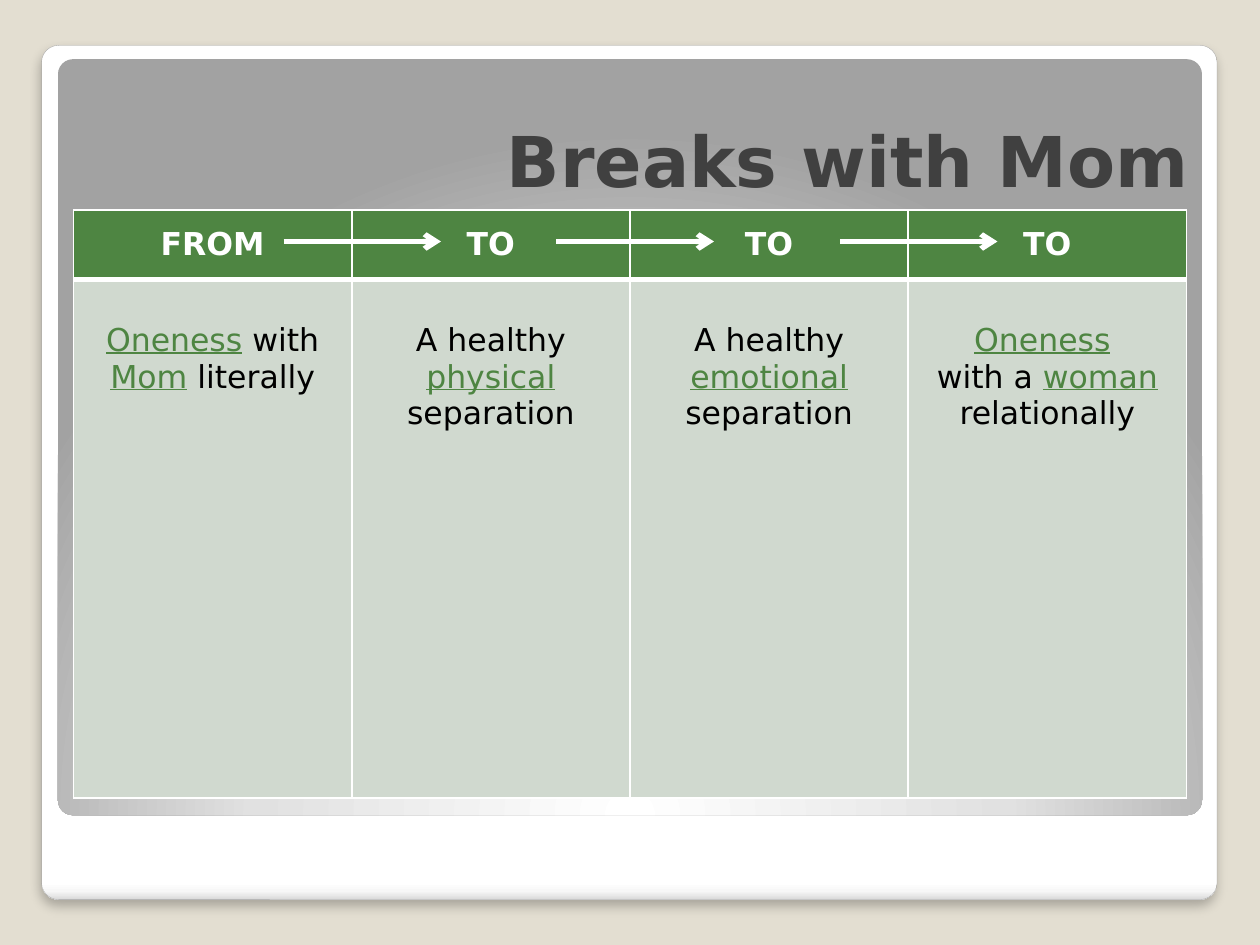
from lxml.etree import SubElement
from pptx import Presentation
from pptx.dml.color import RGBColor
from pptx.enum.shapes import MSO_CONNECTOR, MSO_SHAPE
from pptx.enum.text import MSO_ANCHOR, PP_ALIGN
from pptx.oxml.ns import qn
from pptx.util import Pt

COLORS = {
    "background": "E3DED1", "white": "FFFFFF", "outline": "A4A4A4",
    "title": "404040", "green": "4E8542", "pale": "D0D9CF", "black": "000000",
}
TITLE = {"size": Pt(40), "bold": True, "underline": False}
HEADER = {"size": Pt(18), "bold": True, "underline": False}
BODY = {"size": Pt(18), "bold": False, "underline": False}
KEYWORD = BODY | {"underline": True}


def add_span(para, text, formats, color):
    span = para.add_run()
    span.text = text
    span.font.name = "DejaVu Sans"
    span.font.color.rgb = RGBColor.from_string(COLORS[color])
    for name, value in formats.items():
        setattr(span.font, name, value)


def add_element(parent, tag, **attributes):
    return SubElement(parent, qn(tag), {key: str(value) for key, value in attributes.items()})


deck = Presentation()
deck.slide_width, deck.slide_height = Pt(720), Pt(540)
page = deck.slides.add_slide(deck.slide_layouts[6])
page.background.fill.solid()
page.background.fill.fore_color.rgb = RGBColor.from_string(COLORS["background"])

# Rounded panels: white card, then the grey glow with its centre below the panel
panels = [
    ((23.76, 25.92, 671.76, 488.16),
     [(0, "FFFFFF"), (98, "FFFFFF"), (99, "F7F7F7"), (100, "DADADA")], "linear"),
    ((33.12, 33.84, 653.76, 432),
     [(0, "FFFFFF"), (55, "E1E1E1"), (100, "A2A2A2")], "circle"),
]
for place, stops, kind in panels:
    panel = page.shapes.add_shape(MSO_SHAPE.ROUNDED_RECTANGLE, *map(Pt, place))
    panel.adjustments[0] = 0.02
    panel.shadow.inherit = False
    panel.fill.gradient()
    gradient = panel.element.spPr.find(qn("a:gradFill"))
    for child in list(gradient):
        gradient.remove(child)
    stop_list = add_element(gradient, "a:gsLst")
    for position, color in stops:
        stop = add_element(stop_list, "a:gs", pos=position * 1000)
        add_element(stop, "a:srgbClr", val=color)
    if kind == "linear":
        add_element(gradient, "a:lin", ang=90 * 60000, scaled=0)
        panel.line.color.rgb = RGBColor.from_string(COLORS["outline"])
        panel.line.width = Pt(0.16)
        effects = panel.element.spPr.find(qn("a:effectLst"))
        shadow = add_element(effects, "a:outerShdw", blurRad=Pt(6), dist=Pt(4),
                             dir=90 * 60000, algn="t", rotWithShape=0)
        shade = add_element(shadow, "a:srgbClr", val=COLORS["black"])
        add_element(shade, "a:alpha", val=25000)
    else:
        focus = add_element(gradient, "a:path", path="circle")
        add_element(focus, "a:fillToRect", l=50000, t=175000, r=50000, b=-75000)
        panel.line.fill.background()

# Title
title_box = page.shapes.add_textbox(Pt(41.76), Pt(36), Pt(644.4), Pt(82.8))
title_box.text_frame.word_wrap = True
title_box.text_frame.vertical_anchor = MSO_ANCHOR.BOTTOM
para = title_box.text_frame.paragraphs[0]
para.alignment = PP_ALIGN.RIGHT
add_span(para, "Breaks with Mom", TITLE, "title")

# Table: each step is a heading and its paragraphs; True marks a keyword
steps = [
    ("FROM", [[("Oneness", True), (" with ", False), ("Mom", True), (" literally", False)]]),
    ("TO", [[("A healthy ", False), ("physical ", True), ("separation", False)]]),
    ("TO", [[("A healthy ", False), ("emotional", True), (" separation", False)]]),
    ("TO", [[("Oneness", True), (" ", False)],
            [("with a ", False), ("woman", True), (" relationally", False)]]),
]
frame = page.shapes.add_table(2, len(steps), Pt(42), Pt(120), Pt(636), Pt(336))
table = frame.table
table.rows[0].height, table.rows[1].height = Pt(39.6), Pt(296.4)

for column, (heading, paragraphs) in enumerate(steps):
    table.columns[column].width = Pt(159)
    header, body = table.cell(0, column), table.cell(1, column)

    for cell, fill, thick_side in ((header, "green", "B"), (body, "pale", "T")):
        properties = cell._tc.get_or_add_tcPr()
        for side in "LRTB":
            border = add_element(properties, f"a:ln{side}",
                                 w=Pt(3 if side == thick_side else 1))
            add_element(add_element(border, "a:solidFill"), "a:srgbClr", val=COLORS["white"])
        cell.fill.solid()
        cell.fill.fore_color.rgb = RGBColor.from_string(COLORS[fill])

    header.vertical_anchor = MSO_ANCHOR.MIDDLE
    para = header.text_frame.paragraphs[0]
    para.alignment = PP_ALIGN.CENTER
    add_span(para, heading, HEADER, "white")

    body.margin_top = Pt(24.6)
    for index, spans in enumerate(paragraphs):
        para = body.text_frame.add_paragraph() if index else body.text_frame.paragraphs[0]
        para.alignment = PP_ALIGN.CENTER
        for text, keyword in spans:
            add_span(para, text, KEYWORD if keyword else BODY, "green" if keyword else "black")

# Arrows between the headings
for left in (162, 318, 480):
    arrow = page.shapes.add_connector(
        MSO_CONNECTOR.STRAIGHT, Pt(left), Pt(138), Pt(left + 90), Pt(138))
    arrow.line.color.rgb = RGBColor.from_string(COLORS["white"])
    arrow.line.width = Pt(3)
    add_element(arrow.line._get_or_add_ln(), "a:tailEnd", type="arrow")
    add_element(arrow.element.spPr, "a:effectLst")

deck.save("out.pptx")
